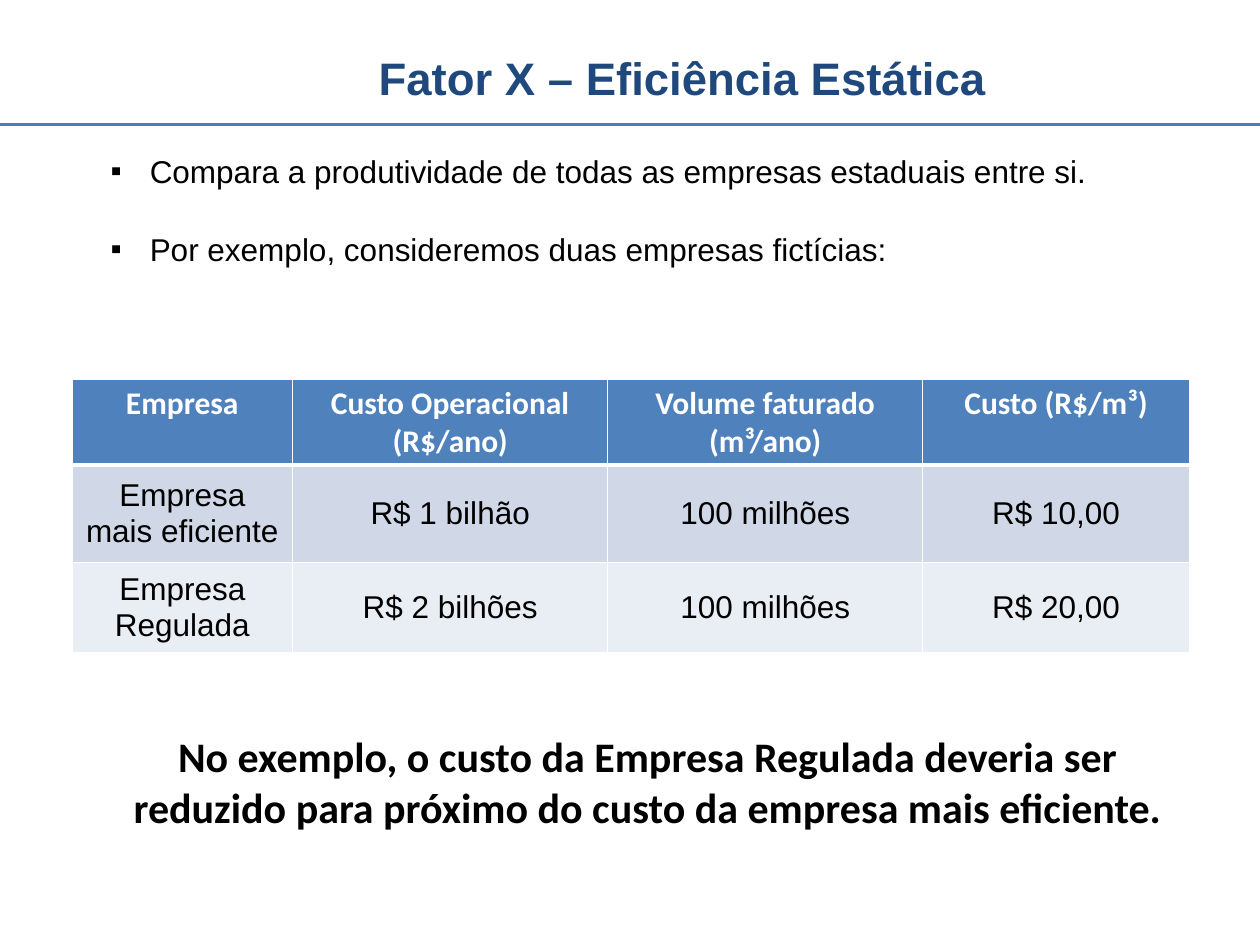
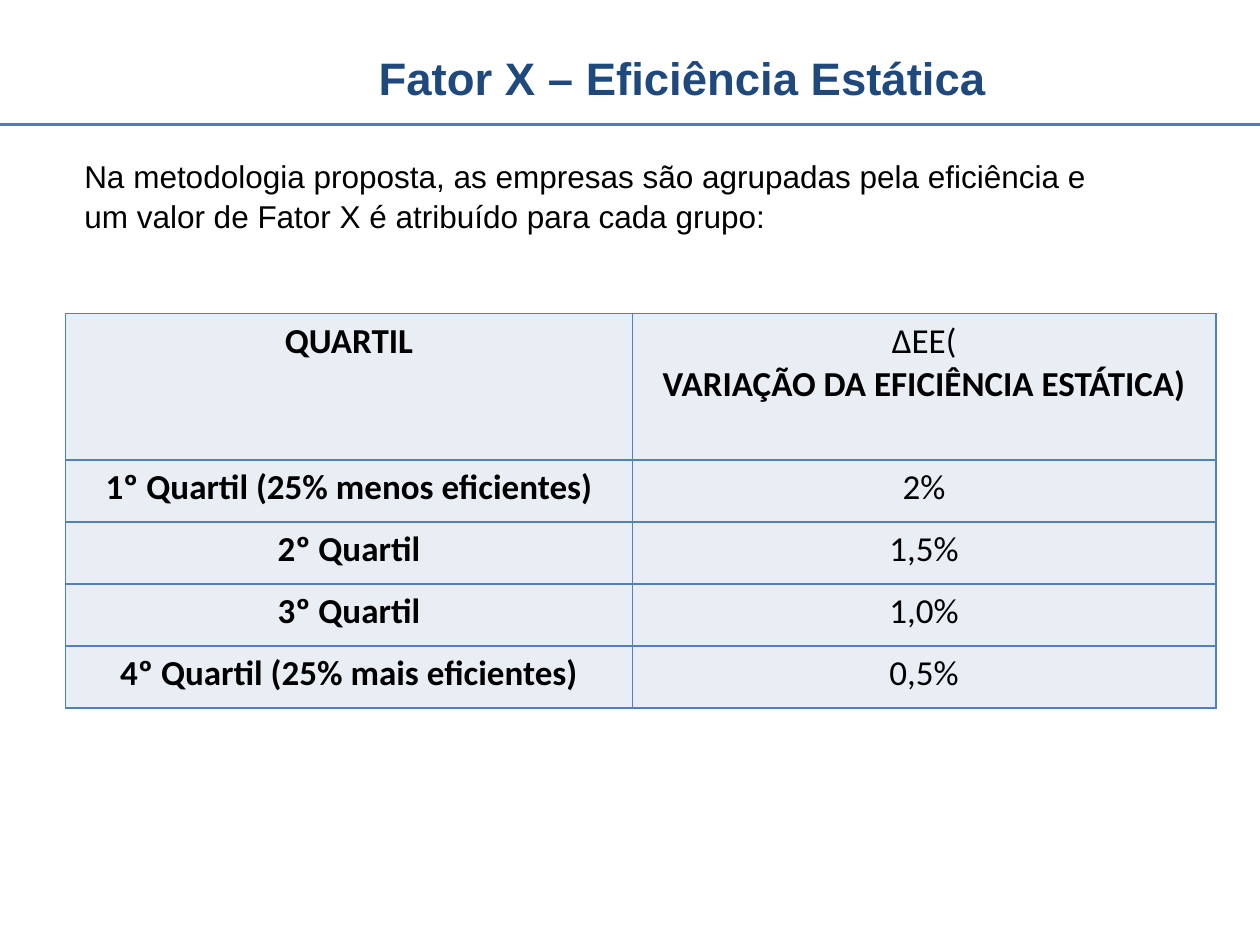
from dataclasses import dataclass, replace

from lxml.etree import SubElement
from pptx import Presentation
from pptx.dml.color import RGBColor
from pptx.enum.shapes import MSO_CONNECTOR
from pptx.enum.text import MSO_ANCHOR, MSO_AUTO_SIZE, PP_ALIGN
from pptx.oxml import parse_xml
from pptx.oxml.ns import nsdecls, qn
from pptx.slide import Slide
from pptx.table import Table, _Cell
from pptx.text.text import TextFrame, _Paragraph
from pptx.util import Cm, Pt

# Shared colours
BLACK = RGBColor(0x00, 0x00, 0x00)
WHITE = RGBColor(0xFF, 0xFF, 0xFF)
NAVY = RGBColor(0x1F, 0x49, 0x7D)
RULE_BLUE = RGBColor(0x4B, 0x7E, 0xBC)
HEADER_BLUE = RGBColor(0x4F, 0x81, 0xBD)
BAND_DARK = RGBColor(0xD0, 0xD8, 0xE8)
BAND_LIGHT = RGBColor(0xE9, 0xED, 0xF4)

SLIDE_WIDTH, SLIDE_HEIGHT = Cm(25.4), Cm(19.05)
RULE_TOP = Cm(2.51)
TITLE = "Fator X – Eficiência Estática"


@dataclass(frozen=True)
class TextStyle:
    size: float
    font: str = "Arial"
    color: RGBColor = BLACK
    bold: bool = False
    align: PP_ALIGN = PP_ALIGN.CENTER


@dataclass(frozen=True)
class Box:
    """Position and size in centimetres."""
    left: float
    top: float
    width: float
    height: float


@dataclass(frozen=True)
class Grid:
    """Table position, column widths and row heights in centimetres."""
    left: float
    top: float
    columns: tuple[float, ...]
    rows: tuple[float, ...]


TITLE_STYLE = TextStyle(26, color=NAVY, bold=True)
BODY_STYLE = TextStyle(18, align=PP_ALIGN.LEFT)
CELL_STYLE = TextStyle(18)
HEADER_STYLE = TextStyle(18, "Calibri", WHITE, True)
CONCLUSION_STYLE = TextStyle(24, "Calibri", bold=True)
QUARTILE_STYLE = TextStyle(20, "Calibri")


def write(frame: TextFrame, text: str, style: TextStyle) -> None:
    frame.text = text
    for paragraph in frame.paragraphs:
        paragraph.alignment = style.align
        for run in paragraph.runs:
            run.font.size = Pt(style.size)
            run.font.name = style.font
            run.font.bold = style.bold
            run.font.color.rgb = style.color


def add_text(slide: Slide, box: Box, text: str, style: TextStyle) -> TextFrame:
    frame = slide.shapes.add_textbox(
        Cm(box.left), Cm(box.top), Cm(box.width), Cm(box.height)).text_frame
    frame.word_wrap = True
    frame.auto_size = MSO_AUTO_SIZE.SHAPE_TO_FIT_TEXT
    write(frame, text, style)
    return frame


def indent(paragraph: _Paragraph, left: float, first: float = 0,
           bullet: str = "") -> None:
    paragraph.level = 1
    paragraph.line_spacing = 1.05
    properties = paragraph._p.get_or_add_pPr()
    properties.set("marL", str(Cm(left)))
    properties.set("indent", str(Cm(first)))
    if bullet:
        SubElement(properties, qn("a:buFont"), typeface="Arial")
        SubElement(properties, qn("a:buChar"), char=bullet)


def set_borders(cell: _Cell, color: RGBColor, bottom: float = 1,
                top: float = 1) -> None:
    widths = {"lnL": 1, "lnR": 1, "lnT": top, "lnB": bottom}
    properties = cell._tc.get_or_add_tcPr()
    for place, (side, width) in enumerate(widths.items()):
        properties.insert(place, parse_xml(
            f'<a:{side} {nsdecls("a")} w="{Pt(width)}"><a:solidFill>'
            f'<a:srgbClr val="{color}"/></a:solidFill></a:{side}>'))


def fill_cell(cell: _Cell, text: str, style: TextStyle, fill: RGBColor) -> None:
    write(cell.text_frame, text, style)
    cell.fill.solid()
    cell.fill.fore_color.rgb = fill


def add_grid(slide: Slide, grid: Grid) -> Table:
    table = slide.shapes.add_table(
        len(grid.rows), len(grid.columns), Cm(grid.left), Cm(grid.top),
        Cm(sum(grid.columns)), Cm(sum(grid.rows))).table
    table.first_row = table.horz_banding = False
    for column, width in zip(table.columns, grid.columns):
        column.width = Cm(width)
    for row, height in zip(table.rows, grid.rows):
        row.height = Cm(height)
    return table


def add_titled_slide(deck: Presentation) -> Slide:
    slide = deck.slides.add_slide(deck.slide_layouts[6])
    rule = slide.shapes.add_connector(
        MSO_CONNECTOR.STRAIGHT, 0, RULE_TOP, SLIDE_WIDTH, RULE_TOP)
    rule.line.color.rgb = RULE_BLUE
    rule.line.width = Pt(2)
    SubElement(rule._element.spPr, qn("a:effectLst"))
    add_text(slide, Box(5.16, 0.89, 17.2, 1.37), TITLE, TITLE_STYLE)
    return slide


def build_comparison(deck: Presentation) -> None:
    slide = add_titled_slide(deck)

    # Introductory bullets
    points = add_text(
        slide, Box(0.71, 2.9, 23.83, 3.33),
        "Compara a produtividade de todas as empresas estaduais entre si.\n"
        "Por exemplo, consideremos duas empresas fictícias:", BODY_STYLE)
    for point in points.paragraphs:
        indent(point, 2.06, -0.79, "▪")
    points.paragraphs[1].space_before = Pt(21.7)

    # Cost comparison table
    costs = (
        ("Empresa", "Custo Operacional (R$/ano)", "Volume faturado (m³/ano)",
         "Custo (R$/m³)"),
        ("Empresa mais eficiente", "R$ 1 bilhão", "100 milhões", "R$ 10,00"),
        ("Empresa Regulada", "R$ 2 bilhões", "100 milhões", "R$ 20,00"),
    )
    row_fills = (HEADER_BLUE, BAND_DARK, BAND_LIGHT)
    table = add_grid(slide, Grid(1.45, 7.65, (4.45, 6.35, 6.35, 5.38),
                                 (1.52, 1.96, 1.83)))
    for r, (company, fill) in enumerate(zip(costs, row_fills)):
        for c, text in enumerate(company):
            cell = table.cell(r, c)
            fill_cell(cell, text, CELL_STYLE if r else HEADER_STYLE, fill)
            set_borders(cell, WHITE, bottom=1 if r else 3,
                        top=3 if r == 1 else 1)
            if r:
                cell.vertical_anchor = MSO_ANCHOR.MIDDLE
            else:
                cell.margin_top = cell.margin_bottom = Cm(0.1)

    # Conclusion
    add_text(slide, Box(2.16, 14.61, 21.79, 2.31),
             "No exemplo, o custo da Empresa Regulada deveria ser reduzido "
             "para próximo do custo da empresa mais eficiente.",
             CONCLUSION_STYLE)


def build_quartiles(deck: Presentation) -> None:
    slide = add_titled_slide(deck)

    # Introduction
    method = add_text(
        slide, Box(0.18, 3, 22.78, 1.8),
        "Na metodologia proposta, as empresas são agrupadas pela eficiência e "
        "um valor de Fator X é atribuído para cada grupo:", BODY_STYLE)
    indent(method.paragraphs[0], 1.27)

    # Quartile table
    quartiles = (
        ("QUARTIL", "∆EE(\nVARIAÇÃO DA EFICIÊNCIA ESTÁTICA)"),
        ("1º Quartil (25% menos eficientes)", "2%"),
        ("2º Quartil", "1,5%"),
        ("3º Quartil", "1,0%"),
        ("4º Quartil (25% mais eficientes)", "0,5%"),
    )
    table = add_grid(slide, Grid(1.32, 6.32, (11.43, 11.76),
                                 (2.95,) + (1.25,) * 4))
    for r, quartile in enumerate(quartiles):
        for c, text in enumerate(quartile):
            cell = table.cell(r, c)
            style = replace(QUARTILE_STYLE, bold=r == 0 or c == 0)
            fill_cell(cell, text, style, BAND_LIGHT)
            set_borders(cell, HEADER_BLUE)
    symbol = table.cell(0, 1).text_frame.paragraphs[0]
    symbol.runs[0].font.bold = False


def main() -> None:
    deck = Presentation()
    deck.slide_width, deck.slide_height = SLIDE_WIDTH, SLIDE_HEIGHT
    build_comparison(deck)
    build_quartiles(deck)
    deck.save("out.pptx")


if __name__ == "__main__":
    main()
